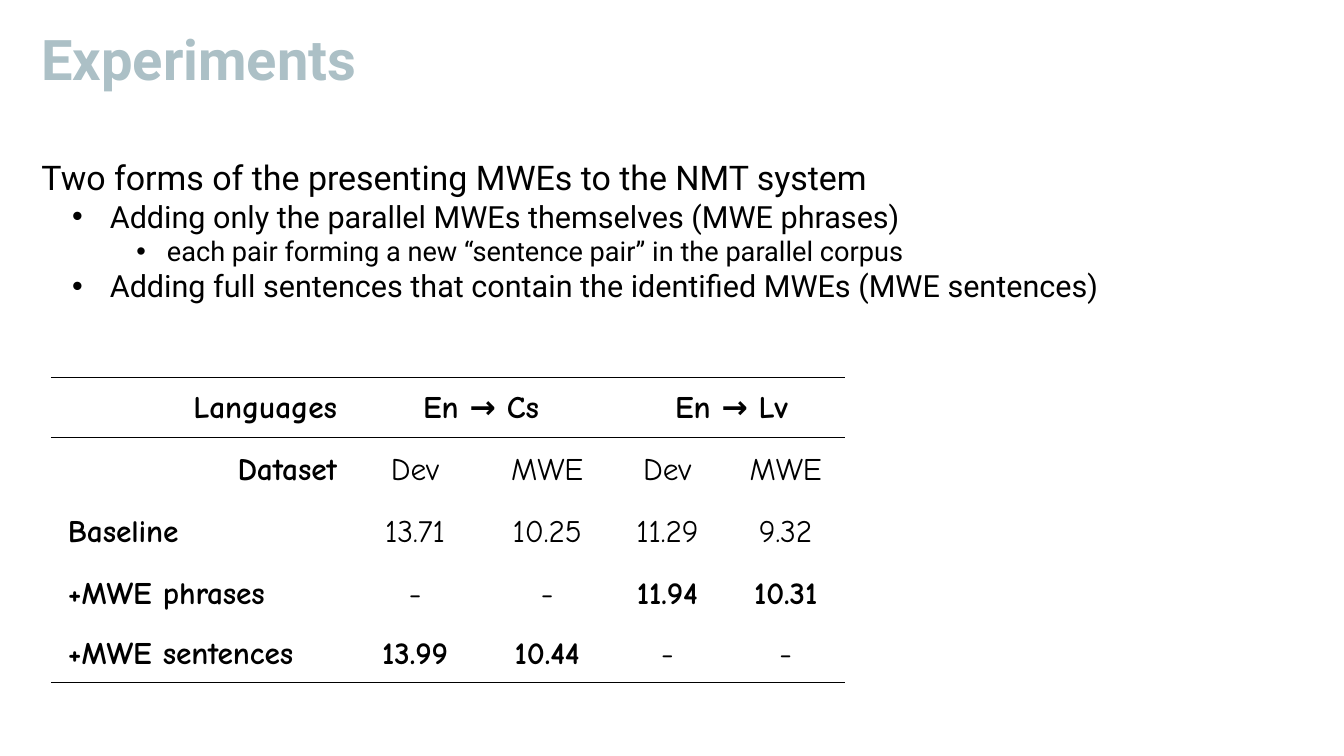
from lxml import etree
from pptx import Presentation
from pptx.dml.color import RGBColor
from pptx.enum import text as t
from pptx.oxml import ns
from pptx.util import Cm, Pt

HUES = {"title": "ACC0C6", "ink": "000000"}


def write(para, words, size, face="Roboto", hue="ink", bold=False):
    run = para.add_run()
    run.text = words
    run.font.size = Pt(size)
    run.font.name = face
    run.font.bold = bold
    run.font.color.rgb = RGBColor.from_string(HUES[hue])
    return run


def place(shape, left, top, width, height):
    shape.left, shape.top = Cm(left), Cm(top)
    shape.width, shape.height = Cm(width), Cm(height)
    frame = shape.text_frame
    frame.word_wrap = True
    frame.auto_size = t.MSO_AUTO_SIZE.NONE
    frame.vertical_anchor = t.MSO_ANCHOR.TOP
    return frame


deck = Presentation()
deck.slide_width, deck.slide_height = Cm(55.85), Cm(31.42)
slide = deck.slides.add_slide(deck.slide_layouts[1])

title = place(slide.shapes.title, 1.47, 1.52, 52.91, 4.45)
para = title.paragraphs[0]
para.alignment = t.PP_ALIGN.LEFT
para.line_spacing = 0.76
write(para, "Experiments", 66, hue="title", bold=True)

body = place(slide.placeholders[1], 1.47, 6.4, 52.91, 23.6)
points = [
    (0, "Two forms of the presenting MWEs to the NMT system"),
    (1, "Adding only the parallel MWEs themselves (MWE phrases)"),
    (2, "each pair forming a new “sentence pair” in the parallel corpus"),
    (1, "Adding full sentences that contain the identified MWEs (MWE sentences)"),
]
levels = [(40, 0, 0), (36, 2.84, -1.57), (32, 5.21, -1.27)]
for i, (level, words) in enumerate(points):
    para = body.add_paragraph() if i else body.paragraphs[0]
    size, margin, indent = levels[level]
    para.level = level
    para.space_before = Pt(0)
    props = para._p.get_or_add_pPr()
    props.set("marL", str(Cm(margin)))
    props.set("indent", str(Cm(indent)))
    if level:
        etree.SubElement(props, ns.qn("a:buFont"), typeface="Arial")
        etree.SubElement(props, ns.qn("a:buChar"), char="•")
    else:
        etree.SubElement(props, ns.qn("a:buNone"))
    write(para, words, size)

rows = [
    ["Languages", "En → Cs", "", "En → Lv", ""],
    ["Dataset", "Dev", "MWE", "Dev", "MWE"],
    ["Baseline", "13.71", "10.25", "11.29", "9.32"],
    ["+MWE phrases", "-", "-", "11.94", "10.31"],
    ["+MWE sentences", "13.99", "10.44", "-", "-"],
]
widths = [12.19, 5.49, 5.49, 4.5, 5.33]
heights = [2.49, 2.64, 2.54, 2.57, 2.41]
rules = {0: ["lnB", "lnT"], 4: ["lnB"]}

frame = slide.shapes.add_table(5, 5, Cm(2.11), Cm(15.7), Cm(33), Cm(12.65))
style = frame._element.xpath(".//a:tableStyleId")[0]
style.text = "{2D5ABB26-0587-4C30-8999-92F81FD0307C}"
table = frame.table
table.first_row = table.horz_banding = False
for col, width in zip(table.columns, widths):
    col.width = Cm(width)
for row, height in zip(table.rows, heights):
    row.height = Cm(height)
for c in (1, 3):
    table.cell(0, c).merge(table.cell(0, c + 1))

for r, row in enumerate(rows):
    for c, words in enumerate(row):
        cell = table.cell(r, c)
        cell.fill.background()
        cell.vertical_anchor = t.MSO_ANCHOR.MIDDLE
        cell.margin_left = cell.margin_right = Cm(0.3)
        cell.margin_top = cell.margin_bottom = 0
        for side in rules.get(r, []):
            line = etree.Element(ns.qn("a:" + side), w=str(Pt(1)))
            fill = etree.SubElement(line, ns.qn("a:solidFill"))
            etree.SubElement(fill, ns.qn("a:srgbClr"), val=HUES["ink"])
            cell._tc.get_or_add_tcPr().insert(0, line)
        if not words:
            continue
        para = cell.text_frame.paragraphs[0]
        para.line_spacing = 1.05
        para.alignment = t.PP_ALIGN.CENTER
        if c == 0:
            para.alignment = t.PP_ALIGN.RIGHT if r < 2 else t.PP_ALIGN.JUSTIFY
        para._p.get_or_add_pPr().set("indent", str(Cm(0.41)))
        bold = r == 0 or c == 0 or (r > 2 and words != "-")
        run = write(para, words, 37, "Comic Neue", bold=bold)
        run.font._element.set("spc", "-10")

deck.save("out.pptx")
